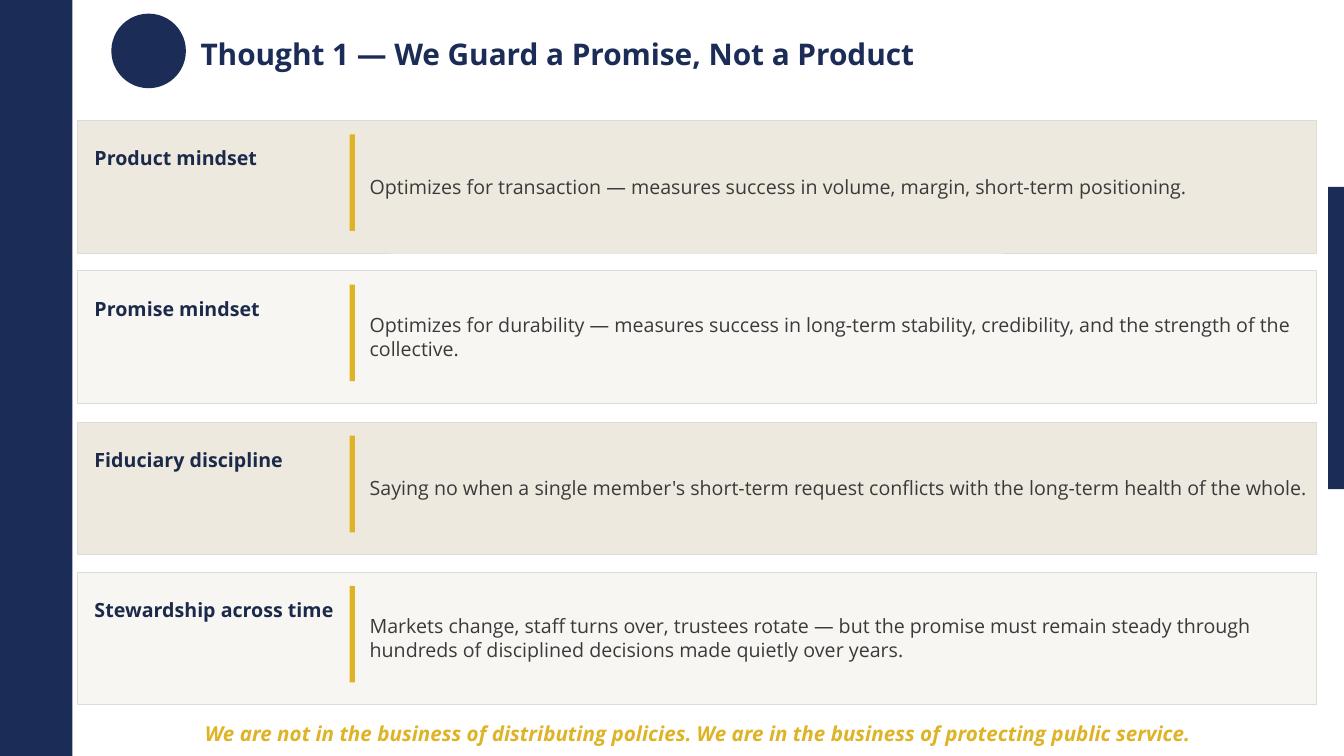
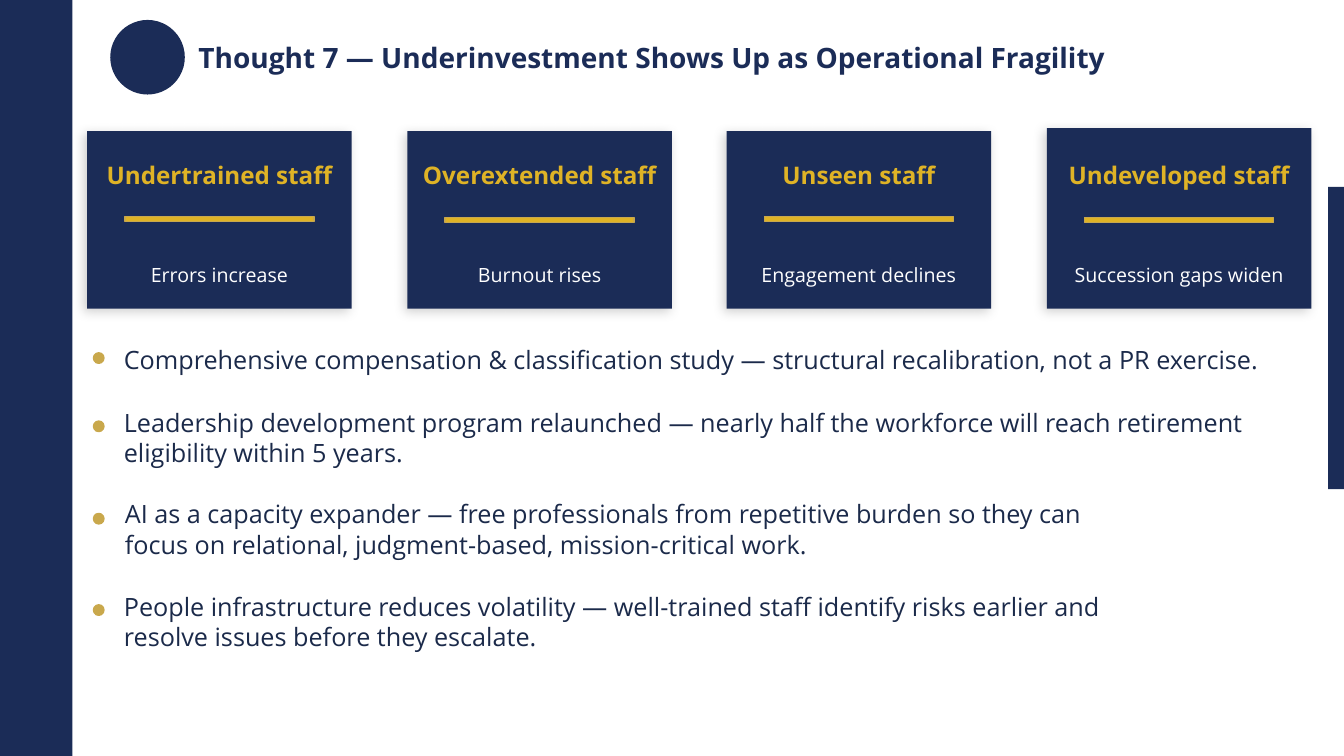
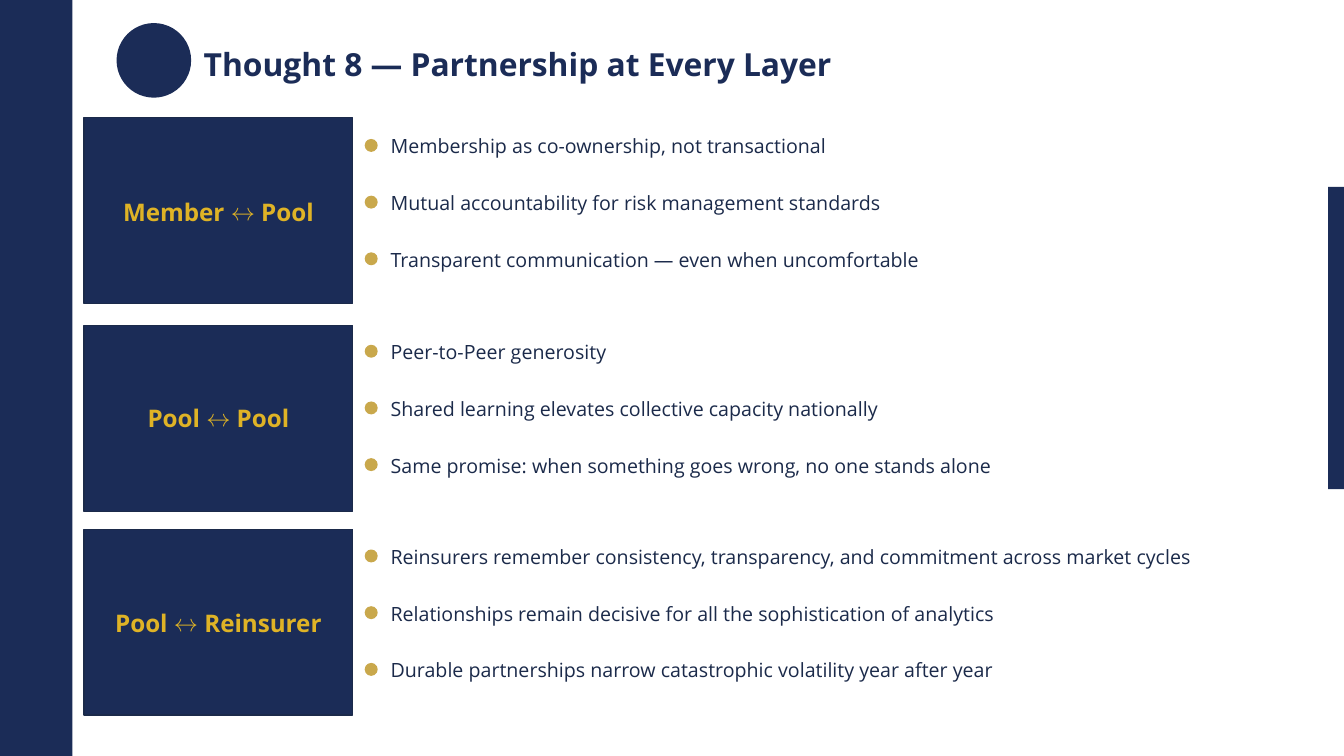
from lxml.etree import SubElement
from pptx import Presentation
from pptx.dml.color import RGBColor
from pptx.enum.shapes import MSO_SHAPE
from pptx.enum.text import MSO_ANCHOR, MSO_AUTO_SIZE, PP_ALIGN
from pptx.oxml.ns import qn
from pptx.util import Pt

PX = 9525
FONT = "Open Sans"
COLORS = {
    "navy": "1B2C57",
    "ink": "1B2A4A",
    "gold": "DFB326",
    "brass": "C9A84C",
    "sand": "EEE9DF",
    "ivory": "F8F6F2",
    "edge": "DDDBD7",
    "gray": "3A3A3A",
    "white": "FFFFFF",
}


def add_block(slide, kind, box, fill, line=None, line_width=1):
    block = slide.shapes.add_shape(kind, *[n * PX for n in box])
    block.shadow.inherit = False
    block.fill.solid()
    block.fill.fore_color.rgb = RGBColor.from_string(COLORS[fill])
    if line:
        block.line.color.rgb = RGBColor.from_string(COLORS[line])
        block.line.width = Pt(line_width)
    else:
        block.line.fill.background()
    return block


def add_words(slide, box, words, size, color, bold=False, italic=False,
              align=PP_ALIGN.LEFT, anchor=MSO_ANCHOR.MIDDLE, holder=None):
    left, top, width, height = [n * PX for n in box]
    holder = holder or slide.shapes.add_textbox(left, top, width, height)
    holder.left, holder.top, holder.width, holder.height = left, top, width, height
    frame = holder.text_frame
    frame.word_wrap = True
    frame.auto_size = MSO_AUTO_SIZE.NONE
    frame.vertical_anchor = anchor
    frame.margin_left = frame.margin_right = frame.margin_top = frame.margin_bottom = 0
    paragraph = frame.paragraphs[0]
    paragraph.alignment = align
    run = paragraph.add_run()
    run.text = words
    run.font.name = FONT
    run.font.size = Pt(size)
    run.font.bold = bold
    run.font.italic = italic
    run.font.color.rgb = RGBColor.from_string(COLORS[color])


prs = Presentation()
prs.slide_width = 1280 * PX
prs.slide_height = 720 * PX
title_only = prs.slide_layouts[5]

headings = [
    ("Thought 1 — We Guard a Promise, Not a Product", 21.3, (191, 5, 1004, 92), (106, 13)),
    ("Thought 7 — Underinvestment Shows Up as Operational Fragility", 20, (189, 9, 1068, 92), (105, 19)),
    ("Thought 8 — Partnership at Every Layer", 22.7, (194, 15, 1086, 92), (111, 22)),
]
slides = []
for heading, size, box, badge in headings:
    slide = prs.slides.add_slide(title_only)
    add_words(slide, box, heading, size, "navy", bold=True, holder=slide.shapes.title)
    add_block(slide, MSO_SHAPE.OVAL, (*badge, 71, 71), "navy")
    slides.append(slide)
promise, fragility, partnership = slides

for band_box in [(0, 0, 69, 720), (1265, 178, 15, 288)]:
    band = add_block(promise, MSO_SHAPE.RECTANGLE, band_box, "navy")
    title_only.shapes.element.insert(2, band.element)

mindsets = [
    ("Product mindset",
     "Optimizes for transaction — measures success in volume, margin, short-term positioning."),
    ("Promise mindset",
     "Optimizes for durability — measures success in long-term stability, credibility, "
     "and the strength of the collective."),
    ("Fiduciary discipline",
     "Saying no when a single member's short-term request conflicts with the long-term health of the whole."),
    ("Stewardship across time",
     "Markets change, staff turns over, trustees rotate — but the promise must remain steady "
     "through hundreds of disciplined decisions made quietly over years."),
]
for i, (mindset, meaning) in enumerate(mindsets):
    top = 115 + round(143.4 * i)
    add_block(promise, MSO_SHAPE.RECTANGLE, (74, top, 1180, 126), ("sand", "ivory")[i % 2], "edge", 0.5)
    add_words(promise, (90, top + 10, 281, 51), mindset, 14, "ink", bold=True)
    add_block(promise, MSO_SHAPE.RECTANGLE, (333, top + 13, 5, 92), "gold")
    add_words(promise, (352, top + 10, 896, 105), meaning, 14, "gray")
add_words(promise, (88, 679, 1154, 38),
          "We are not in the business of distributing policies. We are in the business of protecting public service.",
          14.7, "gold", bold=True, italic=True, align=PP_ALIGN.CENTER)

staff_risks = [
    ("Undertrained staff", "Errors increase", 125, 206),
    ("Overextended staff", "Burnout rises", 125, 207),
    ("Unseen staff", "Engagement declines", 125, 206),
    ("Undeveloped staff", "Succession gaps widen", 122, 207),
]
for i, (staff, outcome, top, rule_top) in enumerate(staff_risks):
    left = 83 + round(304.7 * i)
    card = add_block(fragility, MSO_SHAPE.RECTANGLE, (left, top, 252, 294 - top), "navy")
    effects = card.element.spPr.find(qn("a:effectLst"))
    glow = SubElement(effects, qn("a:outerShdw"), blurRad=str(Pt(8)), dist=str(Pt(3)),
                      dir=str(135 * 60000), algn="bl", rotWithShape="0")
    black = SubElement(glow, qn("a:srgbClr"), val="000000")
    SubElement(black, qn("a:alpha"), val="18000")
    add_words(fragility, (left, 122, 252, 89), staff, 17.3, "gold", bold=True, align=PP_ALIGN.CENTER)
    add_block(fragility, MSO_SHAPE.RECTANGLE, (left + 36, rule_top, 180, 5), "gold", "brass")
    add_words(fragility, (left, 220, 252, 84), outcome, 14, "white", align=PP_ALIGN.CENTER)

responses = [
    ("Comprehensive compensation & classification study — structural recalibration, not a PR exercise.",
     336, (118, 328, 1105, 80)),
    ("Leadership development program relaunched — nearly half the workforce will reach retirement "
     "eligibility within 5 years.",
     401, (118, 388, 1105, 80)),
    ("AI as a capacity expander — free professionals from repetitive burden so they can focus on "
     "relational, judgment-based, mission-critical work.",
     489, (119, 475, 977, 80)),
    ("People infrastructure reduces volatility — well-trained staff identify risks earlier and "
     "resolve issues before they escalate.",
     576, (118, 563, 989, 80)),
]
for response, dot_top, box in responses:
    add_block(fragility, MSO_SHAPE.OVAL, (89, dot_top, 10, 10), "brass", "brass")
    add_words(fragility, box, response, 18, "ink", anchor=MSO_ANCHOR.TOP)

layers = [
    ("Member ↔ Pool", 112, 151, 128, [
        "Membership as co-ownership, not transactional",
        "Mutual accountability for risk management standards",
        "Transparent communication — even when uncomfortable",
    ]),
    ("Pool ↔ Pool", 310, 347, 324, [
        "Peer-to-Peer generosity",
        "Shared learning elevates collective capacity nationally",
        "Same promise: when something goes wrong, no one stands alone",
    ]),
    ("Pool ↔ Reinsurer", 504, 542, 519, [
        "Reinsurers remember consistency, transparency, and commitment across market cycles",
        "Relationships remain decisive for all the sophistication of analytics",
        "Durable partnerships narrow catastrophic volatility year after year",
    ]),
]
for layer, top, label_top, points_top, points in layers:
    add_block(partnership, MSO_SHAPE.RECTANGLE, (80, top, 256, 177), "navy", "ink")
    add_words(partnership, (80, label_top, 256, 102), layer, 17.3, "gold", bold=True, align=PP_ALIGN.CENTER)
    for i, point in enumerate(points):
        point_top = points_top + 54 * i
        add_block(partnership, MSO_SHAPE.OVAL, (348, point_top + 5, 11, 11), "brass", "brass")
        add_words(partnership, (372, point_top, 908, 49), point, 14, "ink", anchor=MSO_ANCHOR.TOP)

prs.save("out.pptx")
